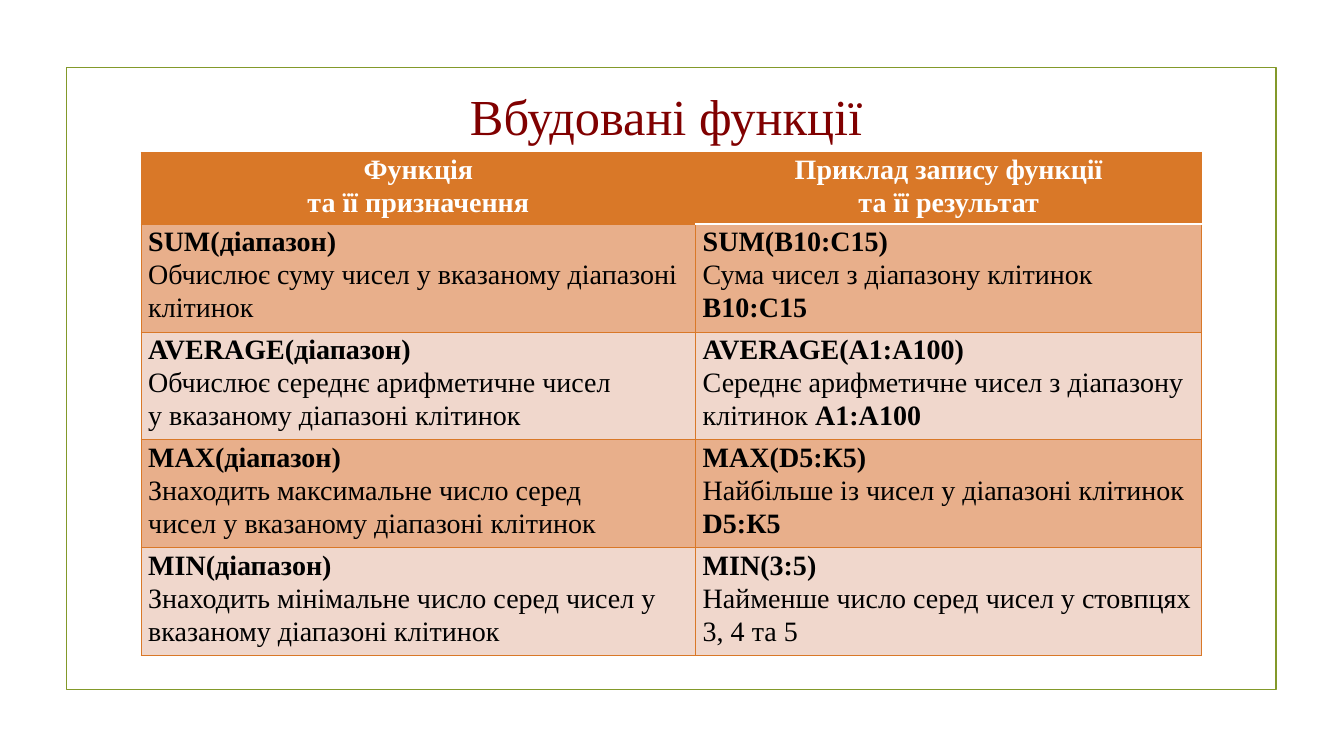
from dataclasses import dataclass

from lxml.etree import SubElement
from pptx import Presentation
from pptx.dml.color import RGBColor
from pptx.enum.shapes import MSO_SHAPE
from pptx.enum.text import MSO_AUTO_SIZE, PP_ALIGN
from pptx.oxml import parse_xml
from pptx.oxml.ns import nsdecls, qn
from pptx.util import Inches, Pt


@dataclass(frozen=True)
class Theme:
    font: str = "Times New Roman"
    title_size: int = 36
    body_size: int = 20
    title: str = "800000"
    frame: str = "83992A"
    accent: str = "D97828"
    band_dark: str = "E8AF8B"
    band_light: str = "F0D7CC"
    white: str = "FFFFFF"
    black: str = "000000"


THEME = Theme()
COL_WIDTHS = (5.5, 5.02)
HEADER_HEIGHT, ROW_HEIGHT = 0.71, 1.07

HEADERS = ("Функція\nта її призначення", "Приклад запису функції\nта її результат")

# Each cell: function, description, bold ending
FUNCTIONS = [
    (("SUM(діапазон)", "Обчислює суму чисел у вказаному діапазоні клітинок", ""),
     ("SUM(В10:С15)", "Сума чисел з діапазону клітинок ", "В10:С15")),
    (("AVERAGE(діапазон)",
      "Обчислює середнє арифметичне чисел\nу вказаному діапазоні клітинок", ""),
     ("AVERAGE(A1:A100)",
      "Середнє арифметичне чисел з діапазону\nклітинок ", "А1:А100")),
    (("MAX(діапазон)",
      "Знаходить максимальне число серед\nчисел у вказаному діапазоні клітинок", ""),
     ("MAX(D5:К5)", "Найбільше із чисел у діапазоні клітинок\n", "D5:К5")),
    (("MIN(діапазон)",
      "Знаходить мінімальне число серед чисел у вказаному діапазоні клітинок", ""),
     ("MIN(3:5)", "Найменше число серед чисел у стовпцях\n3, 4 та 5", "")),
]


def rgb(color):
    return RGBColor.from_string(color)


def add_text(p, text, size, color, bold=False):
    """Add runs to a paragraph, with a line break at each newline."""
    for i, line in enumerate(text.split("\n")):
        if i:
            p.add_line_break()
        if line:
            r = p.add_run()
            r.text = line
            r.font.name = THEME.font
            r.font.size = Pt(size)
            r.font.bold = bold
            r.font.color.rgb = rgb(color)


def set_borders(cell, top, bottom):
    """Draw the four cell borders; the sides use the accent colour."""
    tc_pr = cell._tc.get_or_add_tcPr()
    sides = (("L", THEME.accent), ("R", THEME.accent), ("T", top), ("B", bottom))
    for i, (side, color) in enumerate(sides):
        width = Pt(1.25 if color == THEME.white else 0.75)
        ln = parse_xml(f'<a:ln{side} {nsdecls("a")} w="{width}"/>')
        fill = SubElement(ln, qn("a:solidFill"))
        SubElement(fill, qn("a:srgbClr")).set("val", color)
        tc_pr.insert(i, ln)


def style_cell(cell, fill, top, bottom):
    cell.margin_left = cell.margin_right = Inches(0.07)
    cell.margin_top = cell.margin_bottom = 0
    cell.fill.solid()
    cell.fill.fore_color.rgb = rgb(fill)
    set_borders(cell, top, bottom)
    p = cell.text_frame.paragraphs[0]
    p.line_spacing = 1.07
    p.space_after = Pt(8)
    return p


def add_frame(s, x, y, w, h):
    sp = s.shapes.add_shape(MSO_SHAPE.RECTANGLE, Inches(x), Inches(y), Inches(w), Inches(h))
    sp.shadow.inherit = False
    sp.fill.background()
    sp.line.color.rgb = rgb(THEME.frame)
    sp.line.width = Pt(1.25)


def add_title(s, x, y, w, h):
    sp = s.shapes.add_textbox(Inches(x), Inches(y), Inches(w), Inches(h))
    tf = sp.text_frame
    tf.word_wrap = True
    tf.auto_size = MSO_AUTO_SIZE.SHAPE_TO_FIT_TEXT
    p = tf.paragraphs[0]
    p.alignment = PP_ALIGN.CENTER
    add_text(p, "Вбудовані функції ", THEME.title_size, THEME.title)


def add_function_table(s, x, y):
    height = HEADER_HEIGHT + ROW_HEIGHT * len(FUNCTIONS)
    table = s.shapes.add_table(len(FUNCTIONS) + 1, len(COL_WIDTHS), Inches(x), Inches(y),
                               Inches(sum(COL_WIDTHS)), Inches(height)).table
    table.horz_banding = False
    for column, width in zip(table.columns, COL_WIDTHS):
        column.width = Inches(width)
    for i, row in enumerate(table.rows):
        row.height = Inches(ROW_HEIGHT if i else HEADER_HEIGHT)

    # Only the right column has a white rule below its header
    rules = (THEME.accent, THEME.white)
    for col, text in enumerate(HEADERS):
        p = style_cell(table.cell(0, col), THEME.accent, THEME.accent, rules[col])
        p.alignment = PP_ALIGN.CENTER
        add_text(p, text, THEME.body_size, THEME.white, bold=True)

    # Banded function rows
    for i, cells in enumerate(FUNCTIONS, start=1):
        fill = THEME.band_dark if i % 2 else THEME.band_light
        for col, (name, description, ending) in enumerate(cells):
            top = rules[col] if i == 1 else THEME.accent
            p = style_cell(table.cell(i, col), fill, top, THEME.accent)
            add_text(p, name + "\n", THEME.body_size, THEME.black, bold=True)
            add_text(p, description, THEME.body_size, THEME.black)
            add_text(p, ending, THEME.body_size, THEME.black, bold=True)


def main():
    prs = Presentation()
    prs.slide_width, prs.slide_height = Inches(13.33), Inches(7.5)
    s = prs.slides.add_slide(prs.slide_layouts[6])
    add_frame(s, 0.66, 0.67, 12, 6.17)
    add_title(s, 3.81, 0.79, 5.72, 0.71)
    add_function_table(s, 1.4, 1.51)
    prs.save("out.pptx")


if __name__ == "__main__":
    main()
